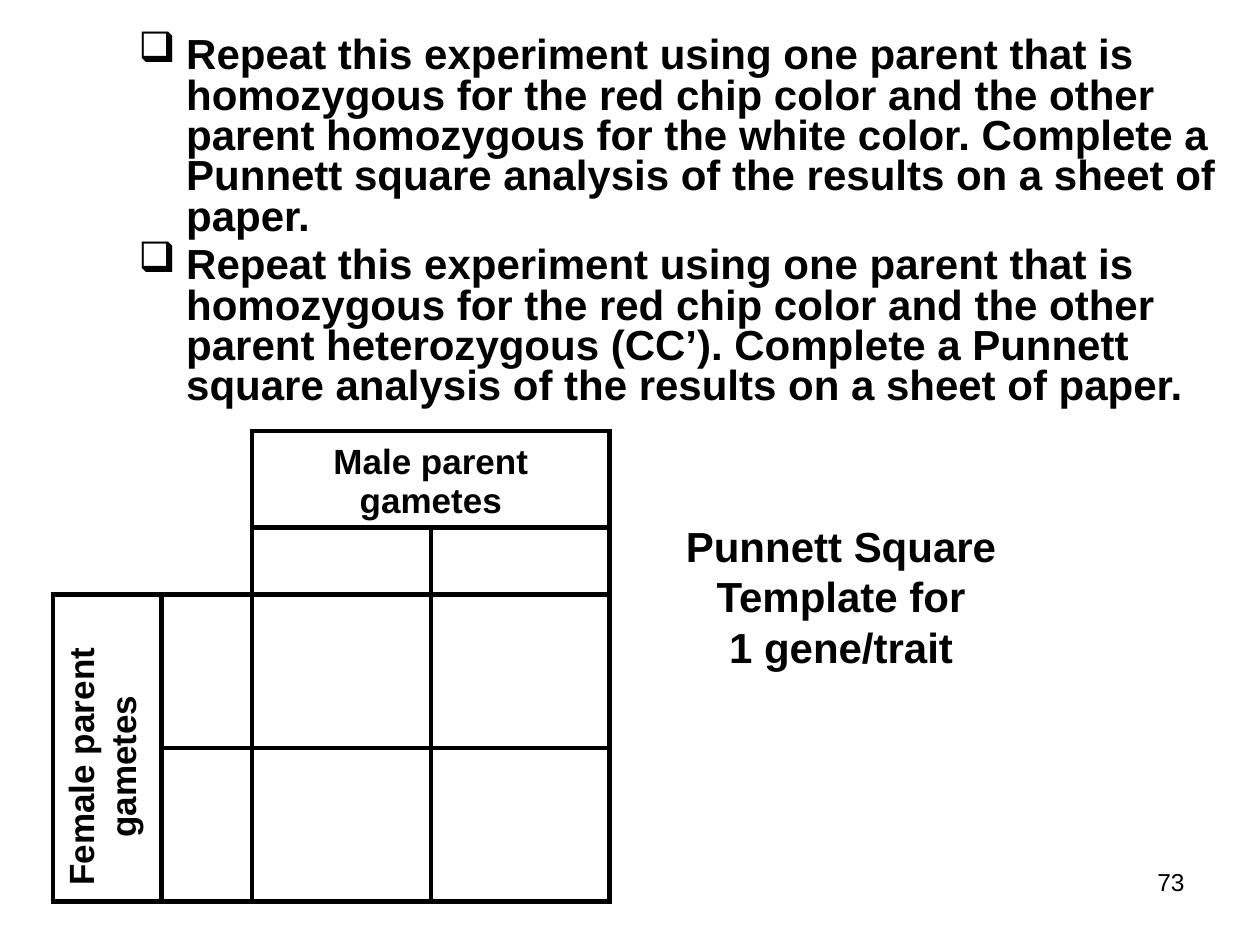
from dataclasses import dataclass

from lxml import etree
from pptx import Presentation
from pptx.dml.color import RGBColor
from pptx.enum.text import MSO_ANCHOR, PP_ALIGN
from pptx.oxml.ns import qn
from pptx.util import Inches, Pt

CENTER, LEFT, RIGHT = PP_ALIGN.CENTER, PP_ALIGN.LEFT, PP_ALIGN.RIGHT
BOTTOM = MSO_ANCHOR.BOTTOM


@dataclass(frozen=True)
class Theme:
    font: str = "Arial"
    ink: str = "000000"
    body: int = 24
    label: int = 20
    number: int = 14
    border: int = 3


THEME = Theme()

TASKS = [
    "Repeat this experiment using one parent that is homozygous for the red chip color "
    "and the other parent homozygous for the white color. Complete a Punnett square "
    "analysis of the results on a sheet of paper.",
    "Repeat this experiment using one parent that is homozygous for the red chip color "
    "and the other parent heterozygous (CC’). Complete a Punnett square analysis of the "
    "results on a sheet of paper.",
]
CAPTION = ["Punnett Square", "Template for", "1 gene/trait"]
MALE_LABEL = "Male parent gametes"
FEMALE_LABEL = "Female parent gametes"
PAGE_NUMBER = "73"

COLUMN_WIDTHS = [0.86, 0.72, 1.42, 1.42]
ROW_HEIGHTS = [0.72, 0.53, 1.22, 1.22]
MERGES = [((0, 0), (1, 1)), ((0, 2), (0, 3)), ((2, 0), (3, 0))]
SIDES = ["L", "R", "T", "B"]


def write(frame, lines, size, align, bold=True):
    frame.text = "\n".join(lines)
    for para in frame.paragraphs:
        para.alignment = align
        for span in para.runs:
            span.font.name = THEME.font
            span.font.size = Pt(size)
            span.font.bold = bold
            span.font.color.rgb = RGBColor.from_string(THEME.ink)


def add_text(page, place, lines, size, align, bold=True, wrap=True):
    box = page.shapes.add_textbox(*map(Inches, place))
    box.text_frame.word_wrap = wrap
    write(box.text_frame, lines, size, align, bold)
    return box


def space_before(para, percent):
    spacing = etree.SubElement(para._p.get_or_add_pPr(), qn("a:spcBef"))
    etree.SubElement(spacing, qn("a:spcPct")).set("val", str(percent * 1000))


def add_bullet(para, symbol, indent):
    properties = para._p.get_or_add_pPr()
    properties.set("marL", str(Inches(indent)))
    properties.set("indent", str(-Inches(indent)))
    etree.SubElement(properties, qn("a:buChar")).set("char", symbol)


def draw_borders(cell, visible):
    properties = cell._tc.get_or_add_tcPr()
    for position, side in enumerate(SIDES):
        line = etree.Element(qn(f"a:ln{side}"))
        line.set("w", str(Pt(THEME.border)))
        if side in visible:
            fill = etree.SubElement(line, qn("a:solidFill"))
            etree.SubElement(fill, qn("a:srgbClr")).set("val", THEME.ink)
        else:
            etree.SubElement(line, qn("a:noFill"))
        properties.insert(position, line)


def add_punnett_square(page):
    size = len(ROW_HEIGHTS), len(COLUMN_WIDTHS)
    place = 0.42, 3.42, sum(COLUMN_WIDTHS), sum(ROW_HEIGHTS)
    table = page.shapes.add_table(*size, *map(Inches, place)).table
    table.first_row = table.horz_banding = False
    for column, width in zip(table.columns, COLUMN_WIDTHS):
        column.width = Inches(width)
    for row, height in zip(table.rows, ROW_HEIGHTS):
        row.height = Inches(height)
    for first, last in MERGES:
        table.cell(*first).merge(table.cell(*last))
    for row in range(size[0]):
        for column in range(size[1]):
            cell = table.cell(row, column)
            cell.fill.background()
            in_corner = row < 2 and column < 2
            draw_borders(cell, ["R", "B"] if in_corner else SIDES)
    header = table.cell(0, 2)
    header.vertical_anchor = BOTTOM
    write(header.text_frame, [MALE_LABEL], THEME.label, CENTER)
    space_before(header.text_frame.paragraphs[0], 20)


def main():
    deck = Presentation()
    deck.slide_width, deck.slide_height = Inches(10), Inches(7.5)
    page = deck.slides.add_slide(deck.slide_layouts[6])

    add_text(page, (7.17, 6.83, 2.33, 0.52), [PAGE_NUMBER], THEME.number, RIGHT, bold=False)
    tasks = add_text(page, (1, 0.25, 9, 3.25), TASKS, THEME.body, LEFT)
    for para in tasks.text_frame.paragraphs:
        para.line_spacing = 0.8
        space_before(para, 20)
        add_bullet(para, "❑", 0.38)

    add_punnett_square(page)
    female = add_text(page, (-0.28, 5.7, 2.17, 0.77), [FEMALE_LABEL], THEME.label, CENTER)
    female.rotation = 270
    add_text(page, (5.33, 4.08, 2.69, 1.31), CAPTION, THEME.body, CENTER, wrap=False)

    deck.save("out.pptx")


if __name__ == "__main__":
    main()
